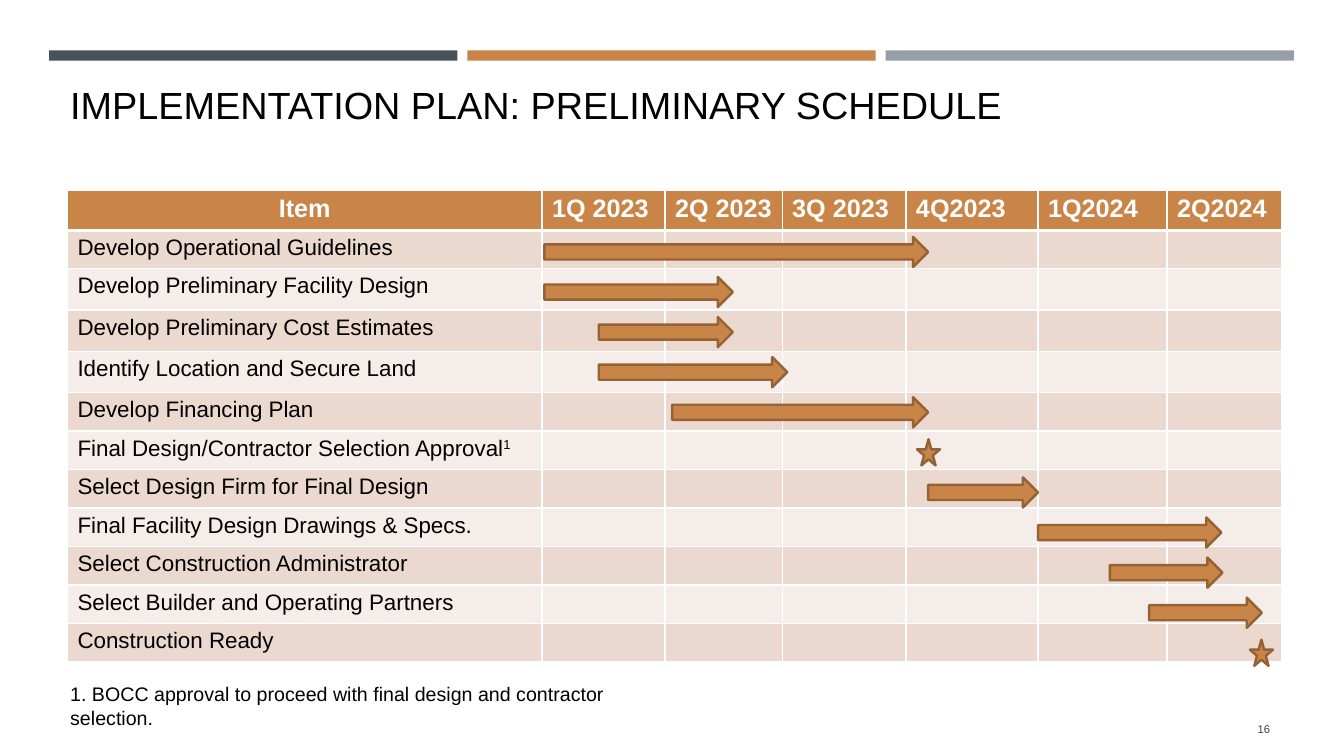
from dataclasses import dataclass

from lxml.etree import SubElement
from pptx import Presentation
from pptx.dml.color import RGBColor
from pptx.enum.shapes import MSO_SHAPE
from pptx.enum.text import MSO_ANCHOR, PP_ALIGN
from pptx.oxml.ns import qn
from pptx.util import Cm, Pt


@dataclass(frozen=True)
class Theme:
    font: str = "Arial"
    slate: str = "465359"
    orange: str = "C98447"
    grey: str = "969FA7"
    outline: str = "956235"
    dark_band: str = "EBD9CF"
    light_band: str = "F5EDE9"
    white: str = "FFFFFF"
    black: str = "000000"
    page_number: str = "404040"
    title_size: int = 27
    header_size: int = 18
    task_size: int = 16
    note_size: int = 14
    page_number_size: int = 8


THEME = Theme()
QUARTERS = ["1Q 2023", "2Q 2023", "3Q 2023", "4Q2023", "1Q2024", "2Q2024"]
COLUMN_WIDTHS = [11.96, 3.1, 2.95, 3.12, 3.33, 3.25, 2.88]
ROW_HEIGHTS = [1.02, 0.96] + [1.04] * 3 + [0.97] * 7

# Task, footnote mark, start and finish in cm; a milestone starts where it finishes.
SCHEDULE = [
    ("Develop Operational Guidelines", "", 13.72, 23.39),
    ("Develop Preliminary Facility Design", "", 13.72, 18.47),
    ("Develop Preliminary Cost Estimates", "", 15.09, 18.47),
    ("Identify Location and Secure Land", "", 15.09, 19.84),
    ("Develop Financing Plan", "", 16.94, 23.39),
    ("Final Design/Contractor Selection Approval", "1", 23.4, 23.4),
    ("Select Design Firm for Final Design", "", 23.39, 26.16),
    ("Final Facility Design Drawings & Specs.", "", 26.16, 30.78),
    ("Select Construction Administrator", "", 27.97, 30.81),
    ("Select Builder and Operating Partners", "", 28.96, 31.8),
    ("Construction Ready", "", 31.79, 31.79),
]
FIRST_MARK_MIDDLE, MARK_STEP = 6.35, 1.01
ARROW_HEIGHT = 0.76
STAR_WIDTH, STAR_HEIGHT = 0.58, 0.66


def format_runs(para, size, color, bold=False):
    for span in para.runs:
        span.font.name = THEME.font
        span.font.size = Pt(size)
        span.font.bold = bold
        span.font.color.rgb = RGBColor.from_string(color)


def add_text(page, text, left, top, width, height, size, color,
             anchor=MSO_ANCHOR.TOP, align=PP_ALIGN.LEFT):
    box = page.shapes.add_textbox(Cm(left), Cm(top), Cm(width), Cm(height))
    frame = box.text_frame
    frame.word_wrap = True
    frame.vertical_anchor = anchor
    frame.text = text
    para = frame.paragraphs[0]
    para.alignment = align
    format_runs(para, size, color)
    return para


def add_filled_shape(page, kind, left, top, width, height, color, outline=None):
    shape = page.shapes.add_shape(kind, Cm(left), Cm(top), Cm(width), Cm(height))
    shape.shadow.inherit = False
    shape.fill.solid()
    shape.fill.fore_color.rgb = RGBColor.from_string(color)
    if outline:
        shape.line.color.rgb = RGBColor.from_string(outline)
        shape.line.width = Pt(1.75)
    else:
        shape.line.fill.background()


def add_top_bars(page):
    for index, color in enumerate([THEME.slate, THEME.orange, THEME.grey]):
        add_filled_shape(page, MSO_SHAPE.RECTANGLE, 1.24 + 10.54 * index, 1.27,
                         10.29, 0.26, color)


def style_cell(cell, color, top=1, bottom=1):
    """Give the cell white borders, with widths in points, and a fill."""
    properties = cell._tc.get_or_add_tcPr()
    for side, width in (("L", 1), ("R", 1), ("T", top), ("B", bottom)):
        line = SubElement(properties, qn(f"a:ln{side}"), w=str(Pt(width)))
        fill = SubElement(line, qn("a:solidFill"))
        SubElement(fill, qn("a:srgbClr"), val=THEME.white)
    cell.fill.solid()
    cell.fill.fore_color.rgb = RGBColor.from_string(color)


def fill_header(table):
    for column, label in enumerate(["Item"] + QUARTERS):
        cell = table.cell(0, column)
        style_cell(cell, THEME.orange, bottom=3)
        para = cell.text_frame.paragraphs[0]
        para.text = label
        para.alignment = PP_ALIGN.LEFT if column else PP_ALIGN.CENTER
        format_runs(para, THEME.header_size, THEME.white, bold=True)


def fill_task_row(table, row, task, mark):
    band = THEME.dark_band if row % 2 else THEME.light_band
    for column in range(len(COLUMN_WIDTHS)):
        cell = table.cell(row, column)
        style_cell(cell, band, top=3 if row == 1 else 1)
        para = cell.text_frame.paragraphs[0]
        if column == 0:
            para.text = task
            if mark:
                span = para.add_run()
                span.text = mark
                span.font._element.set("baseline", "30000")
            format_runs(para, THEME.task_size, THEME.black)
        else:
            SubElement(para._p, qn("a:endParaRPr"), sz=str(THEME.task_size * 100))


def add_schedule_table(page):
    frame = page.shapes.add_table(len(ROW_HEIGHTS), len(COLUMN_WIDTHS), Cm(1.7), Cm(4.79),
                                  Cm(sum(COLUMN_WIDTHS)), Cm(sum(ROW_HEIGHTS)))
    table = frame.table
    for column, width in zip(table.columns, COLUMN_WIDTHS):
        column.width = Cm(width)
    for row, height in zip(table.rows, ROW_HEIGHTS):
        row.height = Cm(height)
    fill_header(table)
    for row, (task, mark, _, _) in enumerate(SCHEDULE, start=1):
        fill_task_row(table, row, task, mark)


def add_schedule_marks(page):
    """Draw an arrow for each period and a star for each milestone."""
    for index, (_, _, start, finish) in enumerate(SCHEDULE):
        middle = FIRST_MARK_MIDDLE + MARK_STEP * index
        if start == finish:
            kind, left = MSO_SHAPE.STAR_5_POINT, start - STAR_WIDTH / 2
            width, height = STAR_WIDTH, STAR_HEIGHT
        else:
            kind, left = MSO_SHAPE.RIGHT_ARROW, start
            width, height = finish - start, ARROW_HEIGHT
        add_filled_shape(page, kind, left, middle - height / 2, width, height,
                         THEME.orange, THEME.outline)


def main():
    deck = Presentation()
    deck.slide_width, deck.slide_height = Cm(33.87), Cm(19.05)
    page = deck.slides.add_slide(deck.slide_layouts[6])
    add_top_bars(page)
    title = add_text(page, "IMPLEMENTATION PLAN: PRELIMINARY SCHEDULE", 1.52, 2.03, 30.63, 1.3,
                     THEME.title_size, THEME.black, anchor=MSO_ANCHOR.BOTTOM)
    title.line_spacing = 1.07
    add_schedule_table(page)
    add_schedule_marks(page)
    add_text(page, "1. BOCC approval to proceed with final design and contractor selection.",
             1.52, 17.07, 15.82, 1.35, THEME.note_size, THEME.black)
    add_text(page, "16", 29.34, 17.86, 2.92, 1.02, THEME.page_number_size, THEME.page_number,
             anchor=MSO_ANCHOR.MIDDLE, align=PP_ALIGN.RIGHT)
    deck.save("out.pptx")


if __name__ == "__main__":
    main()
